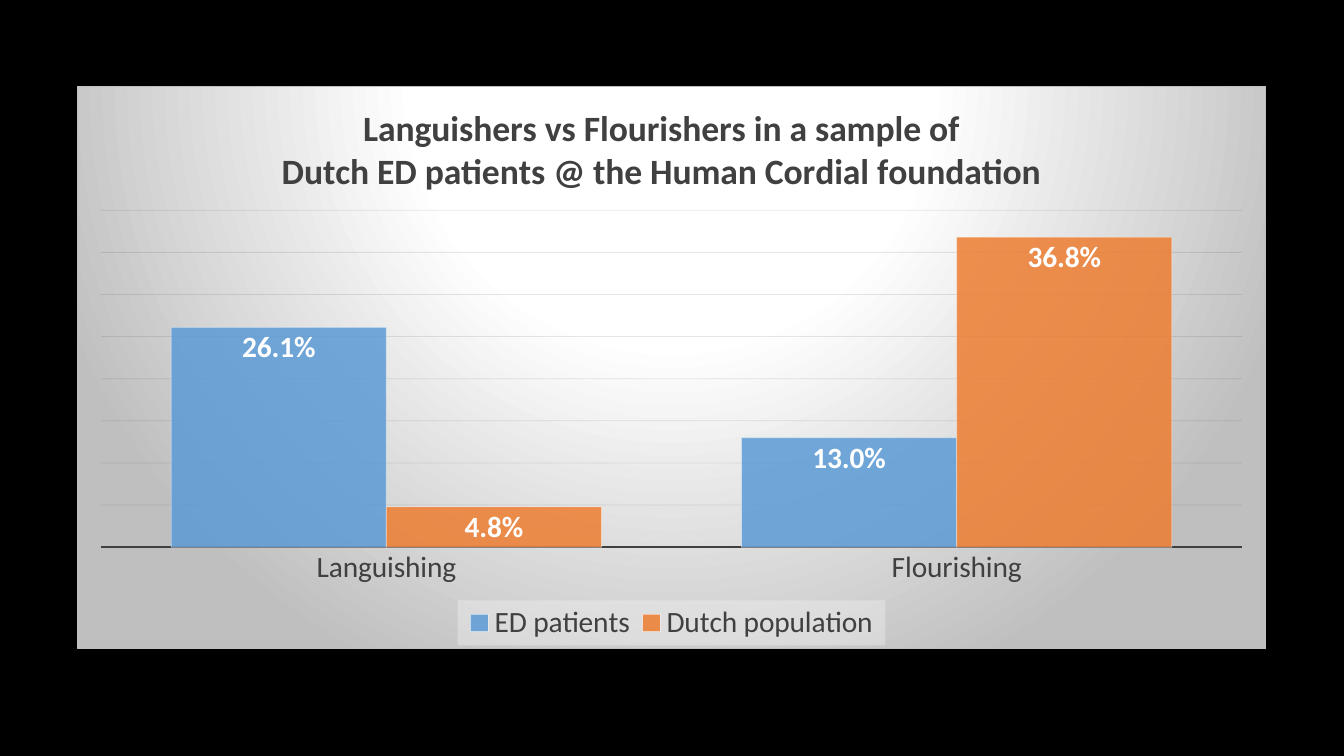
from dataclasses import dataclass

from lxml import etree
from pptx import Presentation
from pptx.chart.data import CategoryChartData
from pptx.dml.color import RGBColor
from pptx.enum.chart import (XL_CHART_TYPE, XL_LABEL_POSITION,
                             XL_LEGEND_POSITION, XL_TICK_MARK)
from pptx.oxml import parse_xml
from pptx.oxml.ns import qn
from pptx.util import Cm, Pt

COLUMNS = XL_CHART_TYPE.COLUMN_CLUSTERED
INSIDE_END = XL_LABEL_POSITION.INSIDE_END
LEGEND_BOTTOM = XL_LEGEND_POSITION.BOTTOM
NO_TICKS = XL_TICK_MARK.NONE
NAMESPACES = ('xmlns:c="http://schemas.openxmlformats.org/drawingml/2006/chart" '
              'xmlns:a="http://schemas.openxmlformats.org/drawingml/2006/main"')


@dataclass(frozen=True)
class Theme:
    font: str = "Calibri"
    page: str = "000000"
    text: str = "404040"
    light: str = "FFFFFF"
    edge: str = "BFBFBF"
    grid: str = "0D0D0D"
    legend: str = "F2F2F2"
    series: tuple = ("5B9BD5", "ED7D31")
    title_size: int = 34
    body_size: int = 28


THEME = Theme()
TITLE = ("Languishers vs Flourishers in a sample of",
         "Dutch ED patients @ the Human Cordial foundation")
CATEGORIES = ("Languishing", "Flourishing")
SERIES = {"ED patients": (0.261, 0.13), "Dutch population": (0.048, 0.368)}


def set_font(font, color, size=THEME.body_size, bold=False):
    font.name = THEME.font
    font.size = Pt(size)
    font.bold = bold
    font.color.rgb = RGBColor.from_string(color)


def set_line(line, color, width):
    line.color.rgb = RGBColor.from_string(color)
    line.width = Pt(width)


def find_part(chart, name):
    return next(chart.element.iter(qn(name)))


def set_alpha(element, percent):
    """Make every colour inside the element partly transparent."""
    for color in element.iter(qn("a:srgbClr")):
        etree.SubElement(color, qn("a:alpha")).set("val", str(percent * 1000))


def place(element, **fractions):
    """Give a chart part a manual layout in fractions of the chart."""
    layout = element.find(qn("c:layout"))
    if layout is None:
        layout = parse_xml(f"<c:layout {NAMESPACES}/>")
        element.insert(0, layout)
    manual = etree.SubElement(layout, qn("c:manualLayout"))
    if element.tag == qn("c:plotArea"):
        etree.SubElement(manual, qn("c:layoutTarget")).set("val", "inner")
    for mode in ("xMode", "yMode"):
        etree.SubElement(manual, qn(f"c:{mode}")).set("val", "edge")
    for name, value in fractions.items():
        etree.SubElement(manual, qn(f"c:{name}")).set("val", str(value))


def add_chart(page):
    data = CategoryChartData(number_format="0.0%")
    data.categories = CATEGORIES
    for name, values in SERIES.items():
        data.add_series(name, values)
    frame = page.shapes.add_chart(COLUMNS, Cm(2.59), Cm(2.9), Cm(39.95), Cm(18.9), data)
    chart = frame.chart
    set_font(chart.font, THEME.text)
    return chart


def style_background(chart):
    stops = "".join(
        f'<a:gs pos="{position * 1000}"><a:srgbClr val="{color}"/></a:gs>'
        for position, color in ((0, THEME.light), (39, THEME.light), (100, THEME.edge)))
    background = parse_xml(
        f'<c:spPr {NAMESPACES}><a:gradFill><a:gsLst>{stops}</a:gsLst>'
        '<a:path path="circle"><a:fillToRect l="50000" t="-80000" r="50000" b="180000"/>'
        f'</a:path></a:gradFill><a:ln w="{Pt(0.75)}"><a:solidFill>'
        f'<a:srgbClr val="{THEME.edge}"/></a:solidFill></a:ln></c:spPr>')
    find_part(chart, "c:chart").addnext(background)


def style_title(chart):
    text_frame = chart.chart_title.text_frame
    text_frame.text = "\n".join(TITLE)
    for para in text_frame.paragraphs:
        for span in para.runs:
            set_font(span.font, THEME.text, THEME.title_size, bold=True)
    place(find_part(chart, "c:title"), x=0.17, y=0.03)


def style_axes(chart):
    category_axis = chart.category_axis
    category_axis.major_tick_mark = NO_TICKS
    set_font(category_axis.tick_labels.font, THEME.text)
    set_line(category_axis.format.line, THEME.text, 1.5)

    value_axis = chart.value_axis
    value_axis.visible = False
    value_axis.minimum_scale = 0
    value_axis.maximum_scale = 0.4
    value_axis.major_unit = 0.05
    value_axis.has_major_gridlines = True
    set_line(value_axis.major_gridlines.format.line, THEME.grid, 0.75)
    set_alpha(find_part(chart, "c:majorGridlines"), 10)
    place(find_part(chart, "c:plotArea"), x=0.02, y=0.22, w=0.96, h=0.6)


def style_columns(chart):
    plot = chart.plots[0]
    plot.vary_by_categories = False
    plot.gap_width = 65
    plot.overlap = 0
    elements = chart.element.iter(qn("c:ser"))
    for series, element, color in zip(plot.series, elements, THEME.series):
        fill = series.format.fill
        fill.solid()
        fill.fore_color.rgb = RGBColor.from_string(color)
        set_line(series.format.line, THEME.light, 0.75)
        properties = element.find(qn("c:spPr"))
        set_alpha(properties.find(qn("a:solidFill")), 85)
        set_alpha(properties.find(qn("a:ln")), 50)

        labels = series.data_labels
        labels.show_value = True
        labels.position = INSIDE_END
        labels.number_format = "0.0%"
        labels.number_format_is_linked = False
        set_font(labels.font, THEME.light, bold=True)


def style_legend(chart):
    chart.has_legend = True
    legend = chart.legend
    legend.position = LEGEND_BOTTOM
    legend.include_in_layout = False
    set_font(legend.font, THEME.text)
    element = find_part(chart, "c:legend")
    panel = parse_xml(f'<c:spPr {NAMESPACES}><a:solidFill>'
                      f'<a:srgbClr val="{THEME.legend}"/></a:solidFill></c:spPr>')
    set_alpha(panel, 39)
    element.find(qn("c:overlay")).addnext(panel)
    # The layout follows the legend position in the schema
    element.find(qn("c:legendPos")).addnext(parse_xml(f"<c:layout {NAMESPACES}/>"))
    for spare in element.findall(qn("c:layout"))[1:]:
        element.remove(spare)
    place(element, x=0.32, y=0.92, w=0.36, h=0.08)


def main():
    deck = Presentation()
    deck.slide_width, deck.slide_height = Cm(45.16), Cm(25.4)
    page = deck.slides.add_slide(deck.slide_layouts[6])
    page.background.fill.solid()
    page.background.fill.fore_color.rgb = RGBColor.from_string(THEME.page)

    # Chart with its parts
    chart = add_chart(page)
    style_background(chart)
    style_title(chart)
    style_axes(chart)
    style_columns(chart)
    style_legend(chart)

    deck.save("out.pptx")


if __name__ == "__main__":
    main()
